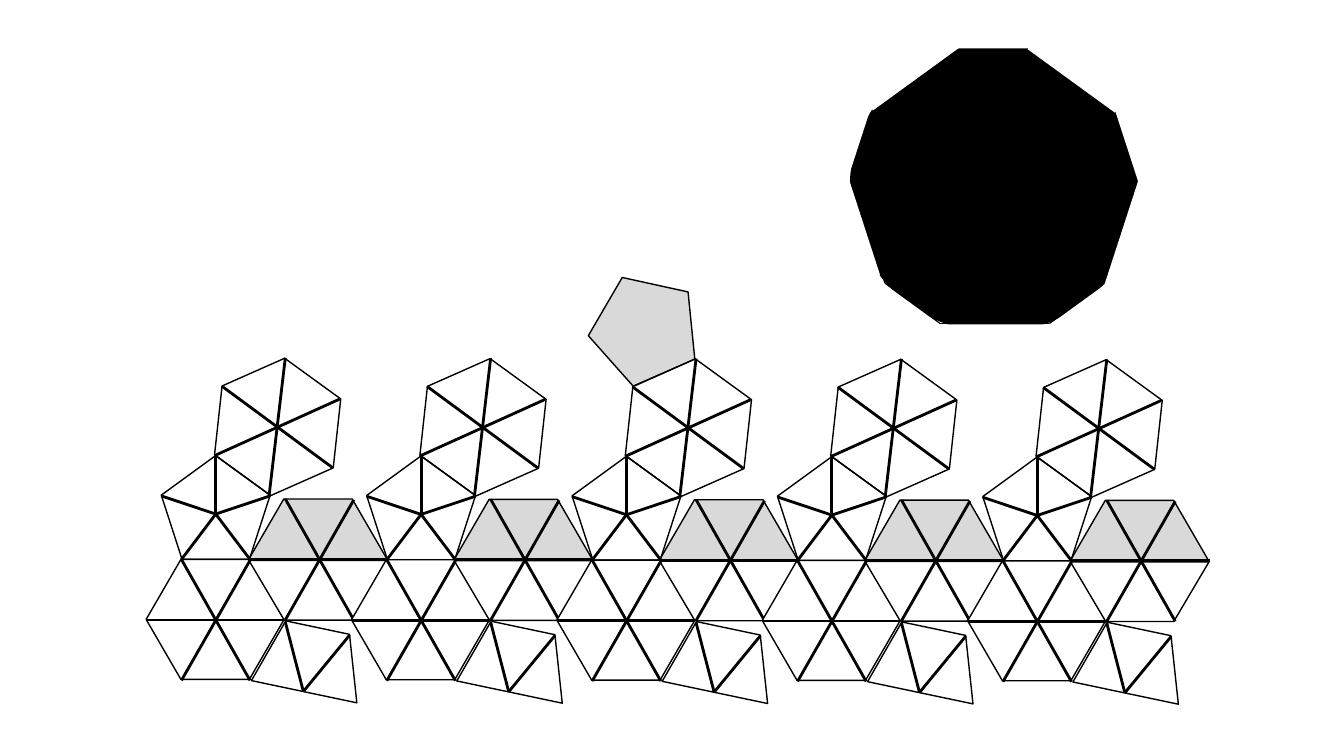
from lxml import etree
from pptx import Presentation
from pptx.dml.color import RGBColor
from pptx.enum.shapes import MSO_CONNECTOR as Connector, MSO_SHAPE as Shape
from pptx.oxml.ns import qn
from pptx.util import Pt

COLORS = {"ink": "000000", "paper": "FFFFFF", "shade": "D9D9D9"}
PAGE_SIZE = (960, 540)

DISC = (607, 29.5, 208.1, 208.1)
DECAGON = [
    (607.7, 127.4), (632.2, 202.3), (671.4, 231.1), (749.5, 231.1), (788.8, 202.3),
    (812.9, 128.9), (797.4, 82.1), (734.4, 35.6), (685.1, 34.9), (622.4, 81.4),
]
MASK_SIZE = (77, 28.8)
MASK_CORNERS = [
    (670.7, 231.8), (602.6, 213.1), (564.5, 149.8), (561.6, 83.5), (607.7, 30.2),
    (670.3, 5.8), (735.1, 31.7), (779.8, 85), (776.2, 156.2), (738, 216),
]

UNIT_COUNT = 5
UNIT_STEP = (146.7, 0.25)
HEXAGON = (98.6, 85.7)
PENTAGON = (77.8, 74.2)
UNIT_SHAPES = [
    (Shape.HEXAGON, (149, 262.1), HEXAGON, 156.1, 0.29, "paper"),
    (Shape.HEXAGON, (177.8, 356.4), HEXAGON, 180, 0.29, "shade"),
    (Shape.REGULAR_PENTAGON, (115.2, 325.4), PENTAGON, 0, None, None),
    (Shape.HEXAGON, (104.4, 399.6), HEXAGON, 0, 0.29, "paper"),
    (Shape.TRAPEZOID, (177.8, 400.3), (99, 42.6), 180, 0.592, "paper"),
    (Shape.TRAPEZOID, (183.6, 447.8), (77, 46.8), 11.9, 0.325, "paper"),
]
PENTAGON_CENTER = (154.1, 367.2)
PENTAGON_CORNERS = [(115.2, 354.2), (154.1, 325.4), (193, 354.2), (129.6, 399.6), (178.6, 399.6)]
FOLDS = [
    ((129.6, 399.6), (178.6, 486)),
    ((129.6, 486), (178.6, 400.3)),
    ((104.4, 442.8), (203, 442.8)),
    ((203.8, 255.6), (192.2, 354.2)),
    ((153.4, 325.4), (242.6, 285.1)),
    ((158.4, 275.8), (237.6, 334.1)),
    ((203.8, 356.4), (252.7, 442.8)),
    ((203.8, 442.8), (252.7, 357.1)),
    ((178.6, 399.6), (277.2, 399.6)),
    ((216.7, 493.9), (249.8, 453.6)),
    ((203.8, 444.2), (216.7, 493.9)),
] + [(PENTAGON_CENTER, corner) for corner in PENTAGON_CORNERS]
CAP_CORNER = (420.5, 195.1)
CAP_ROTATION = 336.3


def color(name):
    return RGBColor.from_string(COLORS[name])


def add_face(page, kind, corner, size, rotation=0, adjustment=None, fill=None, outlined=True):
    face = page.shapes.add_shape(kind, *(Pt(value) for value in (*corner, *size)))
    face.shadow.inherit = False
    face.rotation = rotation
    if adjustment is not None:
        face.adjustments[0] = adjustment
    if fill:
        face.fill.solid()
        face.fill.fore_color.rgb = color(fill)
    else:
        face.fill.background()
    if outlined:
        face.line.color.rgb = color("ink")
        face.line.width = Pt(1)
    else:
        face.line.fill.background()


def add_edge(page, start, end, width):
    edge = page.shapes.add_connector(Connector.STRAIGHT, *(Pt(value) for value in (*start, *end)))
    edge.line.color.rgb = color("ink")
    edge.line.width = Pt(width)
    etree.SubElement(edge._element.spPr, qn("a:effectLst"))


def add_decagon(page):
    add_face(page, Shape.OVAL, DISC[:2], DISC[2:], fill="ink", outlined=False)
    for start, end in zip(DECAGON, DECAGON[1:] + DECAGON[:1]):
        add_edge(page, start, end, 1)
    for index, corner in enumerate(MASK_CORNERS):
        add_face(page, Shape.RECTANGLE, corner, MASK_SIZE, index * 36, fill="paper", outlined=False)


def add_unit(page, index):
    def shifted(point):
        return tuple(value + index * step for value, step in zip(point, UNIT_STEP))

    for kind, corner, size, rotation, adjustment, fill in UNIT_SHAPES:
        add_face(page, kind, shifted(corner), size, rotation, adjustment, fill)
    for start, end in FOLDS:
        add_edge(page, shifted(start), shifted(end), 2)


def main():
    deck = Presentation()
    deck.slide_width, deck.slide_height = (Pt(value) for value in PAGE_SIZE)
    page = deck.slides.add_slide(deck.slide_layouts[6])
    add_decagon(page)
    add_face(page, Shape.REGULAR_PENTAGON, CAP_CORNER, PENTAGON, CAP_ROTATION, fill="shade")
    for index in range(UNIT_COUNT):
        add_unit(page, index)
    deck.save("out.pptx")


if __name__ == "__main__":
    main()
